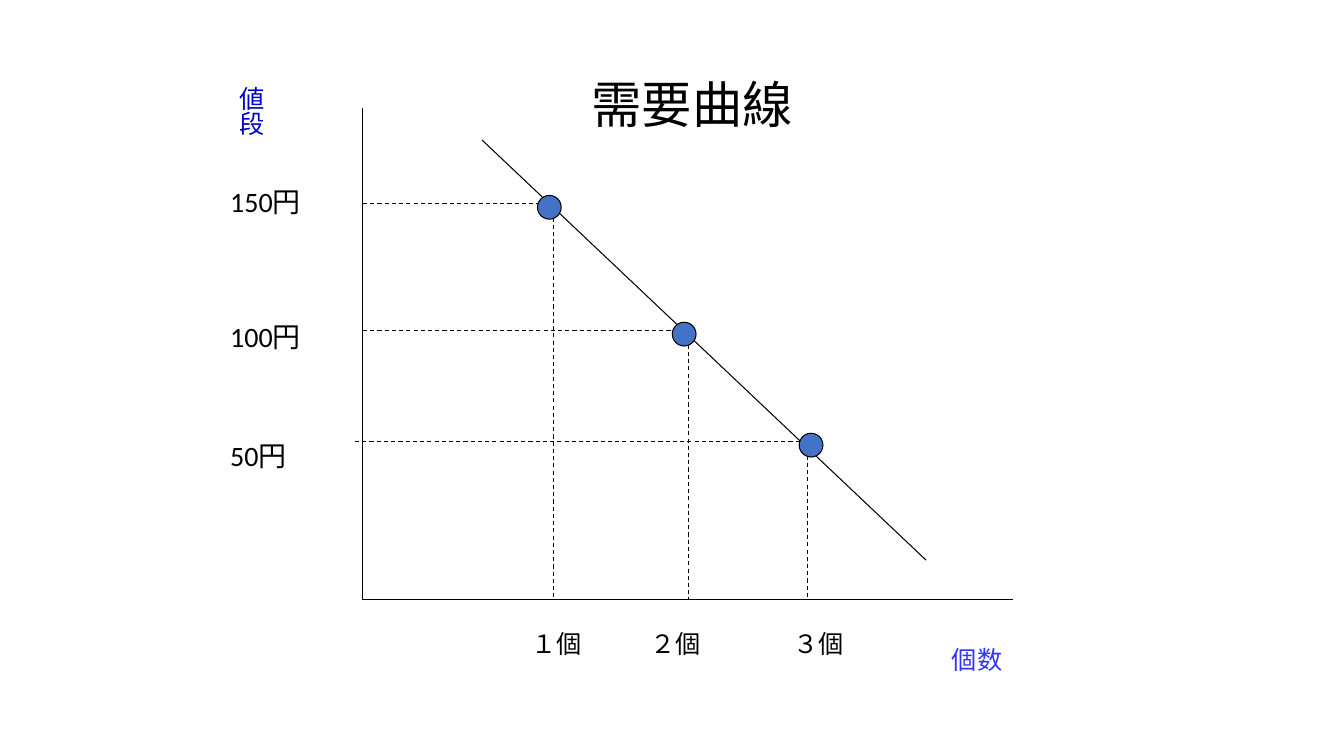
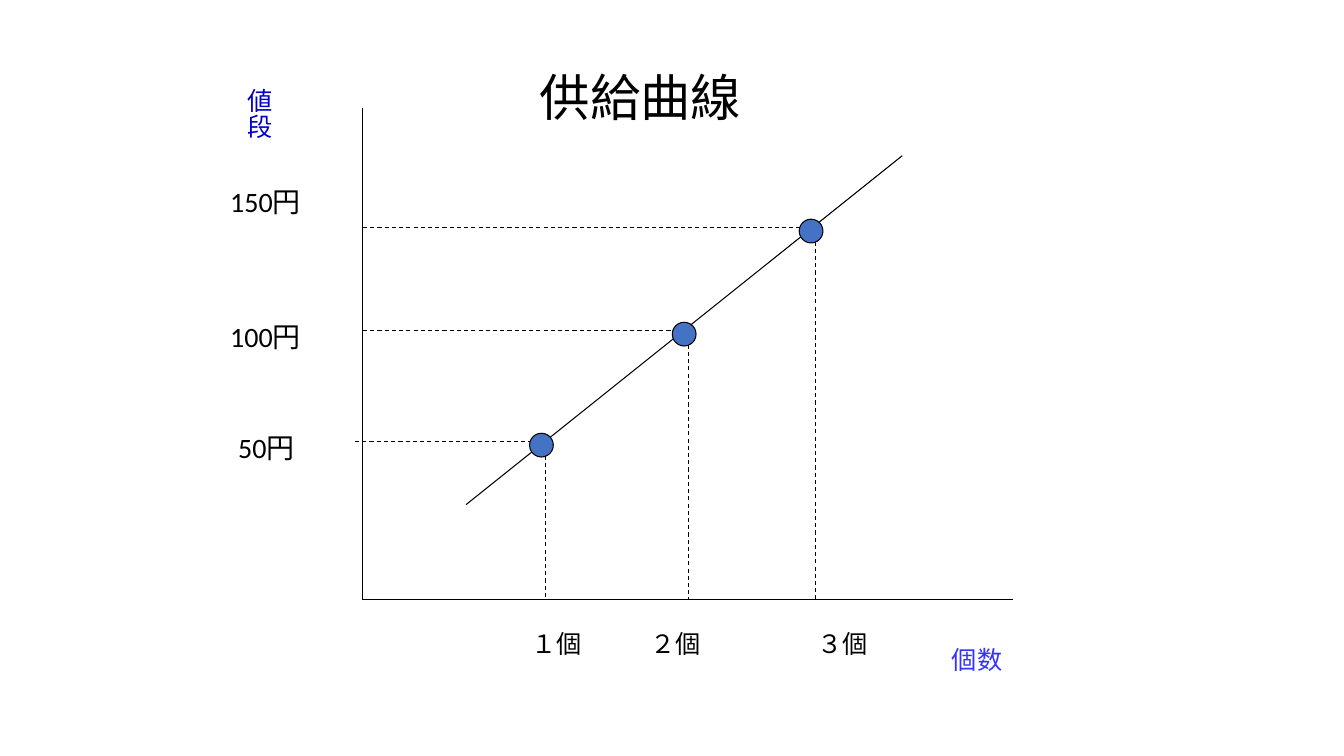
"""Build two slides with a demand curve and a supply curve."""
from lxml import etree
from pptx import Presentation
from pptx.dml.color import RGBColor
from pptx.enum.dml import MSO_LINE
from pptx.enum.shapes import MSO_CONNECTOR, MSO_SHAPE
from pptx.enum.text import MSO_ANCHOR, MSO_AUTO_SIZE, PP_ALIGN
from pptx.oxml.ns import qn
from pptx.util import Inches, Pt

STRAIGHT = MSO_CONNECTOR.STRAIGHT
OVAL = MSO_SHAPE.OVAL
DASH = MSO_LINE.DASH
TOP = MSO_ANCHOR.TOP
GROW = MSO_AUTO_SIZE.SHAPE_TO_FIT_TEXT
LEFT, CENTER = PP_ALIGN.LEFT, PP_ALIGN.CENTER

FONT = "Calibri"
BLACK, DOT_BLUE = "000000", "4472C4"
PRICE_BLUE, COUNT_BLUE = "0000CC", "3333FF"
TITLE_ONLY = 5

AXIS_COLS, AXIS_ROWS = 82, 62
ORIGIN_X, ORIGIN_Y = 3.6, 5.95
CELL = 6.45 / AXIS_COLS
DOT = 3

CHARTS = [
    {
        "title": ("需要曲線", 22, 67, 39, CENTER),
        "curve": ((15, 58), (71, 5)),
        "dots": [(22, 51, 24), (39, 35, 41), (55, 21, 56)],
        "price_axis": (-18, 66),
        "prices": [("150円", -18, 53), ("100円", -18, 36), ("50円", -18, 21)],
        "count_cols": [20, 35, 53],
    },
    {
        "title": ("供給曲線", 21, 68, 33, LEFT),
        "curve": ((13, 12), (68, 56)),
        "dots": [(21, 21, 23), (39, 35, 41), (55, 48, 57)],
        "price_axis": (-17, 65.7),
        "prices": [("150円", -18, 53), ("100円", -18, 36), ("50円", -17, 22)],
        "count_cols": [20, 35, 56],
    },
]


def rgb(value):
    """Turn a hex string into a colour."""
    return RGBColor.from_string(value)


def position(col, row):
    """Return the slide position of a grid point, counted from the origin."""
    return Inches(ORIGIN_X + col * CELL), Inches(ORIGIN_Y - row * CELL)


def size(cols):
    """Return the length of a number of grid cells."""
    return Inches(cols * CELL)


def format_line(line):
    """Give a line the common thin black stroke."""
    line.color.rgb = rgb(BLACK)
    line.width = Pt(0.75)


def add_line(slide, start, end, dashed=False):
    """Draw a straight line between two grid points."""
    c = slide.shapes.add_connector(STRAIGHT, *position(*start), *position(*end))
    format_line(c.line)
    if dashed:
        c.line.dash_style = DASH
    etree.SubElement(c._element.spPr, qn("a:effectLst"))


def set_text(sp, text, pt, color=BLACK, align=LEFT):
    """Write one formatted line of text into a shape."""
    tf = sp.text_frame
    tf.text = text
    tf.word_wrap = True
    tf.auto_size = GROW
    tf.vertical_anchor = TOP
    p = tf.paragraphs[0]
    p.alignment = align
    font = p.runs[0].font
    font.name, font.size = FONT, Pt(pt)
    font.color.rgb = rgb(color)


def add_label(slide, text, col, row, cols, rows, pt, color=BLACK):
    """Place a text label on the grid and return it."""
    sp = slide.shapes.add_textbox(*position(col, row), size(cols), size(rows))
    set_text(sp, text, pt, color)
    return sp


def add_title(slide, text, col, row, cols, align):
    """Move and format the title placeholder."""
    sp = slide.shapes.title
    sp.left, sp.top = position(col, row)
    sp.width, sp.height = size(cols), size(9)
    set_text(sp, text, 36, align=align)


def add_axes(slide, price_axis):
    """Draw both axes with their names."""
    add_line(slide, (0, AXIS_ROWS), (0, 0))
    add_line(slide, (0, 0), (AXIS_COLS, 0))
    add_label(slide, "個数", 73, -5, 22, 5, 18, COUNT_BLUE)
    sp = add_label(slide, "値段", *price_axis, 6.4, 22, 18, PRICE_BLUE)
    sp.text_frame._txBody.bodyPr.set("vert", "eaVert")


def add_guides(slide, dot_row, drop_col):
    """Draw the dashed lines from a point to both axes."""
    row = dot_row - 1
    start = -1 if row == 20 else 0
    add_line(slide, (start, row), (drop_col, row), dashed=True)
    add_line(slide, (drop_col, row), (drop_col, 0), dashed=True)


def add_dot(slide, col, row):
    """Draw a round marker on the curve."""
    sp = slide.shapes.add_shape(OVAL, *position(col, row), size(DOT), size(DOT))
    sp.shadow.inherit = False
    sp.fill.solid()
    sp.fill.fore_color.rgb = rgb(DOT_BLUE)
    format_line(sp.line)


def add_chart_slide(prs, chart):
    """Build one slide with a curve, its points and its labels."""
    slide = prs.slides.add_slide(prs.slide_layouts[TITLE_ONLY])
    add_title(slide, *chart["title"])
    add_axes(slide, chart["price_axis"])
    add_line(slide, *chart["curve"])
    for _, row, drop_col in chart["dots"]:
        add_guides(slide, row, drop_col)
    for text, col in zip(("１個", "２個", "３個"), chart["count_cols"]):
        add_label(slide, text, col, -3, 14, 5, 18)
    for text, col, row in chart["prices"]:
        add_label(slide, text, col, row, 15, 5.5, 20)
    for col, row, _ in chart["dots"]:
        add_dot(slide, col, row)


def main():
    """Build and save the presentation."""
    prs = Presentation()
    prs.slide_width, prs.slide_height = Inches(13.33), Inches(7.5)
    for chart in CHARTS:
        add_chart_slide(prs, chart)
    prs.save("out.pptx")


if __name__ == "__main__":
    main()
